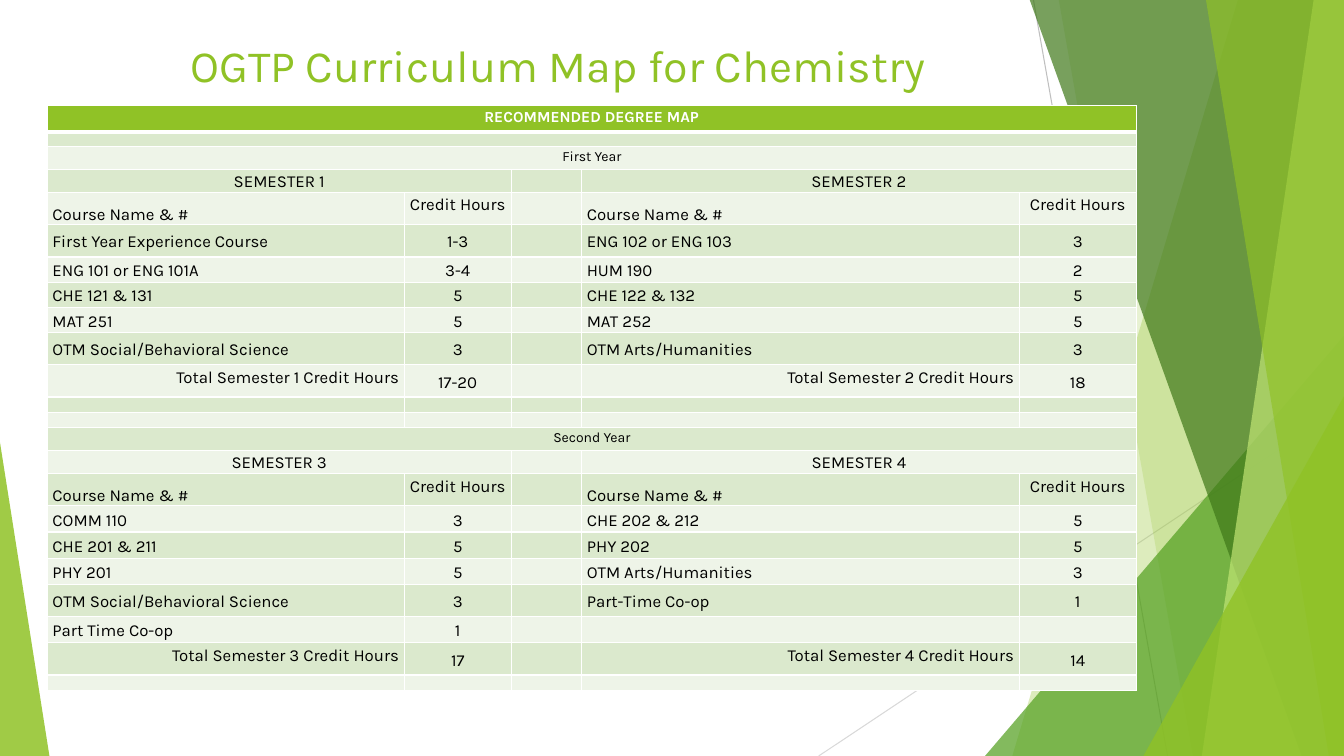
from lxml import etree
from pptx import Presentation
from pptx.dml.color import RGBColor
from pptx.enum.shapes import MSO_CONNECTOR, MSO_SHAPE
from pptx.enum.text import MSO_ANCHOR, PP_ALIGN
from pptx.oxml.ns import qn
from pptx.util import Inches, Pt

STRAIGHT = MSO_CONNECTOR.STRAIGHT
TRIANGLE = MSO_SHAPE.ISOSCELES_TRIANGLE
TOP, MIDDLE, BOTTOM = MSO_ANCHOR.TOP, MSO_ANCHOR.MIDDLE, MSO_ANCHOR.BOTTOM
LEFT, CENTER, RIGHT = PP_ALIGN.LEFT, PP_ALIGN.CENTER, PP_ALIGN.RIGHT

FONT = "Karla"
WIDTH, HEIGHT = 13.33, 7.5
COLORS = {
    "lime": "90C226", "green": "54A021", "forest": "3F7819", "pale": "C0E474",
    "band_dark": "DBE9CD", "band_light": "EEF4E8",
    "line_dark": "BFBFBF", "line_light": "D9D9D9",
    "white": "FFFFFF", "black": "000000",
}

COLUMN_WIDTHS = [3.54, 1.06, 0.7, 4.34, 1.16]
# Column spans that are merged in each kind of row
MERGES = {"full": [(0, 4)], "semester": [(0, 1), (3, 4)]}
# Vertical anchors of the name and hours cells, and alignment of the names
ROW_STYLES = {
    "full": (TOP, TOP, CENTER),
    "semester": (TOP, TOP, CENTER),
    "heading": (BOTTOM, TOP, LEFT),
    "course": (MIDDLE, MIDDLE, LEFT),
    "total": (TOP, MIDDLE, RIGHT),
    "blank": (TOP, TOP, LEFT),
}
# Each course: row height, then name and hours for both semesters
FIRST_YEAR = [
    (0.32, "First Year Experience Course", "1-3", "ENG 102 or ENG 103", "3"),
    (0.25, "ENG 101 or ENG 101A", "3-4", "HUM 190", "2"),
    (0.25, "CHE 121 & 131", "5", "CHE 122 & 132", "5"),
    (0.25, "MAT 251", "5", "MAT 252", "5"),
    (0.32, "OTM Social/Behavioral Science", "3", "OTM Arts/Humanities", "3"),
]
SECOND_YEAR = [
    (0.26, "COMM 110", "3", "CHE 202 & 212", "5"),
    (0.26, "CHE 201 & 211", "5", "PHY 202", "5"),
    (0.26, "PHY 201", "5", "OTM Arts/Humanities", "3"),
    (0.32, "OTM Social/Behavioral Science", "3", "Part-Time Co-op", "1"),
    (0.26, "Part Time Co-op", "1", "", ""),
]


def color(name):
    return RGBColor.from_string(COLORS[name])


def paint(shape, color_name, opacity):
    """Give a shape a translucent fill with no outline or shadow."""
    shape.shadow.inherit = False
    shape.line.fill.background()
    shape.fill.solid()
    shape.fill.fore_color.rgb = color(color_name)
    value = shape.fill._xPr.find(".//" + qn("a:srgbClr"))
    etree.SubElement(value, qn("a:alpha"), val=str(opacity * 1000))


def add_ray(slide, start, end, color_name):
    ray = slide.shapes.add_connector(STRAIGHT, *map(Inches, start + end))
    ray.line.color.rgb = color(color_name)
    ray.line.width = Pt(0.75)
    etree.SubElement(ray._element.spPr, qn("a:effectLst"))


def add_blade(slide, top_x, bottom_x, color_name, opacity):
    """Add a slanted panel that reaches the right edge of the slide."""
    top = -0.01
    builder = slide.shapes.build_freeform(Inches(top_x), Inches(top))
    corners = [(WIDTH, top), (WIDTH, HEIGHT), (bottom_x, HEIGHT)]
    builder.add_line_segments([(Inches(x), Inches(y)) for x, y in corners])
    paint(builder.convert_to_shape(), color_name, opacity)


def add_corner(slide, left, top, width, apex, color_name, opacity):
    """Add a right triangle that stands on the bottom of the slide."""
    box = map(Inches, (left, top, width, HEIGHT - top))
    triangle = slide.shapes.add_shape(TRIANGLE, *box)
    triangle.adjustments[0] = apex
    paint(triangle, color_name, opacity)


def write(text_frame, text, size, color_name, bold=False):
    """Set the text and return its paragraph."""
    text_frame.text = text
    paragraph = text_frame.paragraphs[0]
    font = paragraph.runs[0].font
    font.name, font.size, font.bold = FONT, Pt(size), bold
    font.color.rgb = color(color_name)
    return paragraph


def add_title(slide, text):
    box = slide.shapes.add_textbox(*map(Inches, (1.79, 0.33, 7.77, 1.44)))
    box.text_frame.word_wrap = True
    box.text_frame.vertical_anchor = TOP
    write(box.text_frame, text, 32, "lime")


def set_borders(cell, bottom_width):
    properties = cell._tc.get_or_add_tcPr()
    widths = [("a:lnL", 1), ("a:lnR", 1), ("a:lnT", 1), ("a:lnB", bottom_width)]
    for position, (tag, width) in enumerate(widths):
        border = etree.Element(qn(tag), w=str(Pt(width)))
        fill = etree.SubElement(border, qn("a:solidFill"))
        etree.SubElement(fill, qn("a:srgbClr"), val=COLORS["white"])
        properties.insert(position, border)


def fill_cell(cell, text, fill_name, size, text_color, anchor, alignment, bold):
    cell.fill.solid()
    cell.fill.fore_color.rgb = color(fill_name)
    cell.margin_left = cell.margin_right = Inches(0.05)
    cell.margin_top = cell.margin_bottom = 0
    cell.vertical_anchor = anchor
    if text:
        paragraph = write(cell.text_frame, text, size, text_color, bold)
        paragraph.alignment = alignment
        paragraph.line_spacing = 1.15
    else:
        # A small end mark keeps empty rows low
        paragraph = cell.text_frame.paragraphs[0]
        etree.SubElement(paragraph._p, qn("a:endParaRPr"), sz="600")


def year_rows(name, courses, first_semester, totals):
    """List the rows of one year as (kind, height, texts, size)."""
    semesters = (first_semester, first_semester + 1)
    first, second = [f"SEMESTER {number}" for number in semesters]
    sums = [f"Total Semester {number} Credit Hours" for number in semesters]
    heading = ["Course Name & #", "Credit Hours"]
    return [
        ("full", 0.23, [name, "", "", "", ""], 10),
        ("semester", 0.22, [first, "", "", second, ""], 12),
        ("heading", 0.32, heading + [""] + heading, 12),
        *[("course", height, [left, hours, "", right, more_hours], 12)
          for height, left, hours, right, more_hours in courses],
        ("total", 0.32, [sums[0], totals[0], "", sums[1], totals[1]], 12),
    ]


def add_degree_map(slide):
    blank = ("blank", 0.15, [""] * 5, 12)
    rows = [
        ("full", 0.26, ["RECOMMENDED DEGREE MAP", "", "", "", ""], 11),
        ("full", 0.14, [""] * 5, 12),
        *year_rows("First Year", FIRST_YEAR, 1, ("17-20", "18")),
        blank, blank,
        *year_rows("Second Year", SECOND_YEAR, 3, ("17", "14")),
        blank,
    ]
    total_height = sum(row[1] for row in rows)
    box = map(Inches, (0.47, 1.05, sum(COLUMN_WIDTHS), total_height))
    table = slide.shapes.add_table(len(rows), len(COLUMN_WIDTHS), *box).table
    table.first_row = table.horz_banding = False
    for column, width in zip(table.columns, COLUMN_WIDTHS):
        column.width = Inches(width)

    for row_index, (kind, height, texts, size) in enumerate(rows):
        table.rows[row_index].height = Inches(height)
        is_header = row_index == 0
        band = "band_dark" if row_index % 2 else "band_light"
        name_anchor, hours_anchor, name_alignment = ROW_STYLES[kind]
        for column_index, text in enumerate(texts):
            cell = table.cell(row_index, column_index)
            is_name = column_index in (0, 3)
            fill_cell(cell, text, "lime" if is_header else band, size,
                      "white" if is_header else "black",
                      name_anchor if is_name else hours_anchor,
                      name_alignment if is_name else CENTER, is_header)
            set_borders(cell, 3 if is_header else 1)
        for first, last in MERGES.get(kind, []):
            table.cell(row_index, first).merge(table.cell(row_index, last))


def main():
    presentation = Presentation()
    presentation.slide_width = Inches(WIDTH)
    presentation.slide_height = Inches(HEIGHT)
    slide = presentation.slides.add_slide(presentation.slide_layouts[6])

    # Background facets, from back to front
    add_ray(slide, (10.25, 0), (11.58, HEIGHT), "line_dark")
    add_ray(slide, (WIDTH, 4.03), (8.12, HEIGHT), "line_light")
    add_blade(slide, 12.28, 10.04, "lime", 30)
    add_blade(slide, 10.5, 11.83, "lime", 20)
    add_corner(slide, 9.77, 3.33, 3.56, 1, "green", 72)
    add_blade(slide, 10.21, 12.91, "forest", 70)
    add_blade(slide, 13.03, 11.92, "pale", 70)
    add_blade(slide, 11.96, 13.18, "lime", 65)
    add_corner(slide, 11.34, 3.93, 1.99, 1, "lime", 80)
    add_corner(slide, 0, 4.39, 0.49, 0, "lime", 85)

    # Title and degree map
    add_title(slide, "OGTP Curriculum Map for Chemistry")
    add_degree_map(slide)
    presentation.save("out.pptx")


if __name__ == "__main__":
    main()
